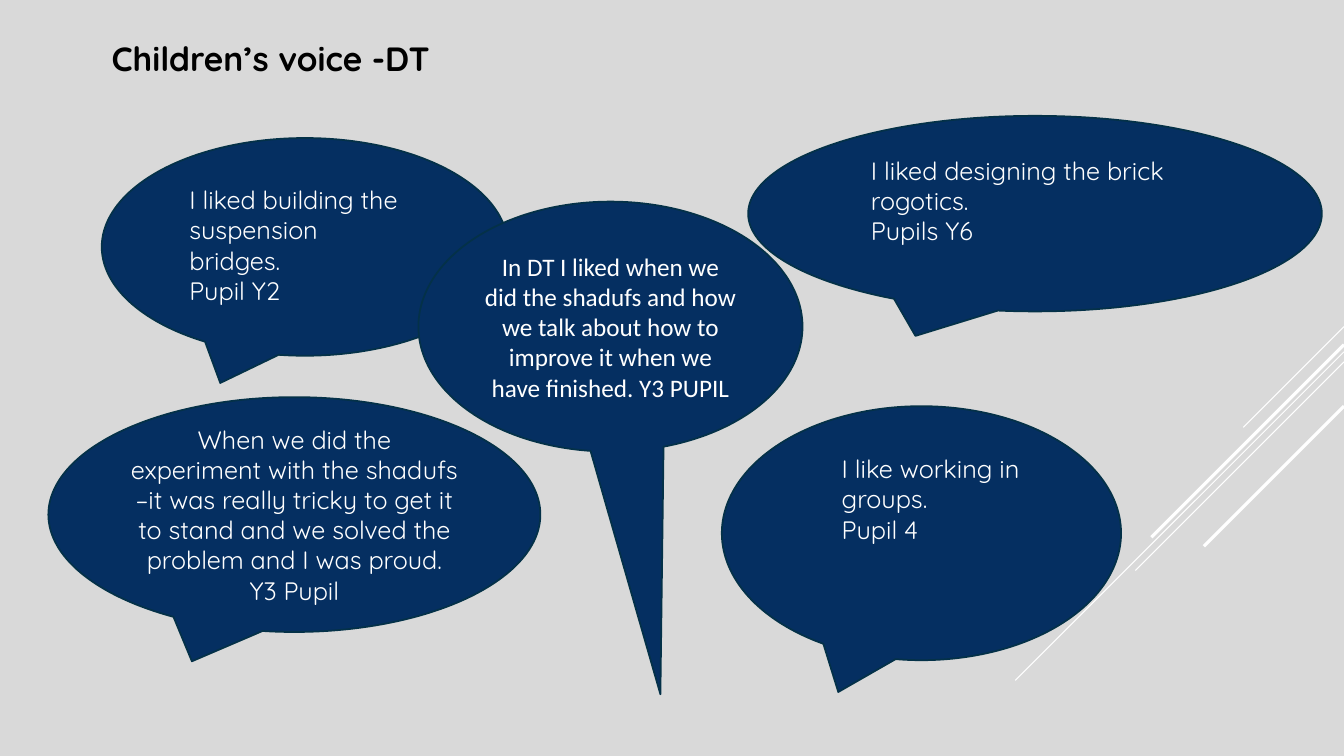
from pptx import Presentation
from pptx.dml.color import RGBColor
from pptx.enum.shapes import MSO_CONNECTOR, MSO_SHAPE
from pptx.enum.text import MSO_ANCHOR, MSO_AUTO_SIZE, PP_ALIGN
from pptx.oxml.ns import qn
from pptx.util import Inches, Pt
from lxml.etree import SubElement

GREY = RGBColor(0xD9, 0xD9, 0xD9)
NAVY = RGBColor(0x05, 0x2F, 0x61)
EDGE = RGBColor(0x04, 0x31, 0x48)
WHITE = RGBColor(0xFF, 0xFF, 0xFF)
BLACK = RGBColor(0, 0, 0)

TITLE = {"name": "Quicksand", "size": Pt(24), "bold": True}
VOICE = {"name": "Quicksand", "size": Pt(18)}
PLAIN = {"name": "Calibri", "size": Pt(18)}

# Start x, start y, run down to the left, width in points
RAYS = [
    (13.33, 3.24, 1, 0.75),
    (13.33, 3.49, 3.26, 0.75),
    (13.33, 3.59, 2.07, 0.75),
    (13.33, 3.42, 1.91, 2.25),
    (13.33, 4.03, 1.39, 2.25),
]

# Bubble box, lines, text box relative to the bubble (None: inside), font, tail
VOICES = [
    ((1.01, 1.37, 4.03, 2.16),
     ["I liked building the suspension bridges.", "Pupil Y2"],
     (0.77, 0.41, 2.37, 1.31), VOICE, None),
    ((7.42, 1.15, 5.69, 1.94),
     ["I liked designing the brick rogotics.", "Pupils Y6"],
     (1.12, 0.34, 3.69, 1.01), VOICE, None),
    ((0.48, 3.94, 4.88, 2.33),
     ["When we did the experiment with the shadufs –it was really tricky to "
      "get it to stand and we solved the problem and I was proud. Y3 Pupil"],
     None, VOICE, None),
    ((7.16, 4.03, 3.96, 2.52),
     ["I like working in groups.", "Pupil 4"],
     (1.09, 0.42, 2.57, 1.01), VOICE, None),
    ((4.15, 2, 3.81, 2.48),
     ["In DT I liked when we did the shadufs and how we talk about how to "
      "improve it when we have finished. Y3 PUPIL"],
     None, PLAIN, (0.13, 1.471)),
]


def write(frame, lines, style, color, align=PP_ALIGN.LEFT):
    frame.word_wrap = True
    for i, line in enumerate(lines):
        para = frame.paragraphs[0] if i == 0 else frame.add_paragraph()
        para.alignment = align
        run = para.add_run()
        run.text = line
        for key, value in style.items():
            setattr(run.font, key, value)
        run.font.color.rgb = color


def label(slide, box, lines, style, color):
    frame = slide.shapes.add_textbox(*map(Inches, box)).text_frame
    write(frame, lines, style, color)
    frame.auto_size = MSO_AUTO_SIZE.SHAPE_TO_FIT_TEXT


def bubble(slide, box, lines, inset, style, tail):
    shape = slide.shapes.add_shape(
        MSO_SHAPE.OVAL_CALLOUT, *map(Inches, box))
    shape.shadow.inherit = False
    shape.fill.solid()
    shape.fill.fore_color.rgb = NAVY
    shape.line.color.rgb = EDGE
    shape.line.width = Pt(1.25)
    if tail:
        shape.adjustments[0], shape.adjustments[1] = tail
    if inset:
        left, top, wide, high = inset
        label(slide, (box[0] + left, box[1] + top, wide, high),
              lines, style, WHITE)
    else:
        shape.text_frame.vertical_anchor = MSO_ANCHOR.MIDDLE
        write(shape.text_frame, lines, style, WHITE, PP_ALIGN.CENTER)


def ray(slide, x, y, run, width):
    line = slide.shapes.add_connector(
        MSO_CONNECTOR.STRAIGHT,
        *map(Inches, (x, y, x - run, y + run)))
    line.line.color.rgb = WHITE
    line.line.width = Pt(width)
    SubElement(line._element.spPr, qn("a:effectLst"))


def main():
    deck = Presentation()
    deck.slide_width, deck.slide_height = Inches(13.33), Inches(7.5)
    slide = deck.slides.add_slide(deck.slide_layouts[6])
    slide.background.fill.solid()
    slide.background.fill.fore_color.rgb = GREY

    # Diagonal rays at the right edge
    for item in RAYS:
        ray(slide, *item)

    # Heading
    label(slide, (1.01, 0.33, 4.56, 0.5), ["Children’s voice -DT"],
          TITLE, BLACK)

    # Speech bubbles
    for item in VOICES:
        bubble(slide, *item)

    deck.save("out.pptx")


if __name__ == "__main__":
    main()
